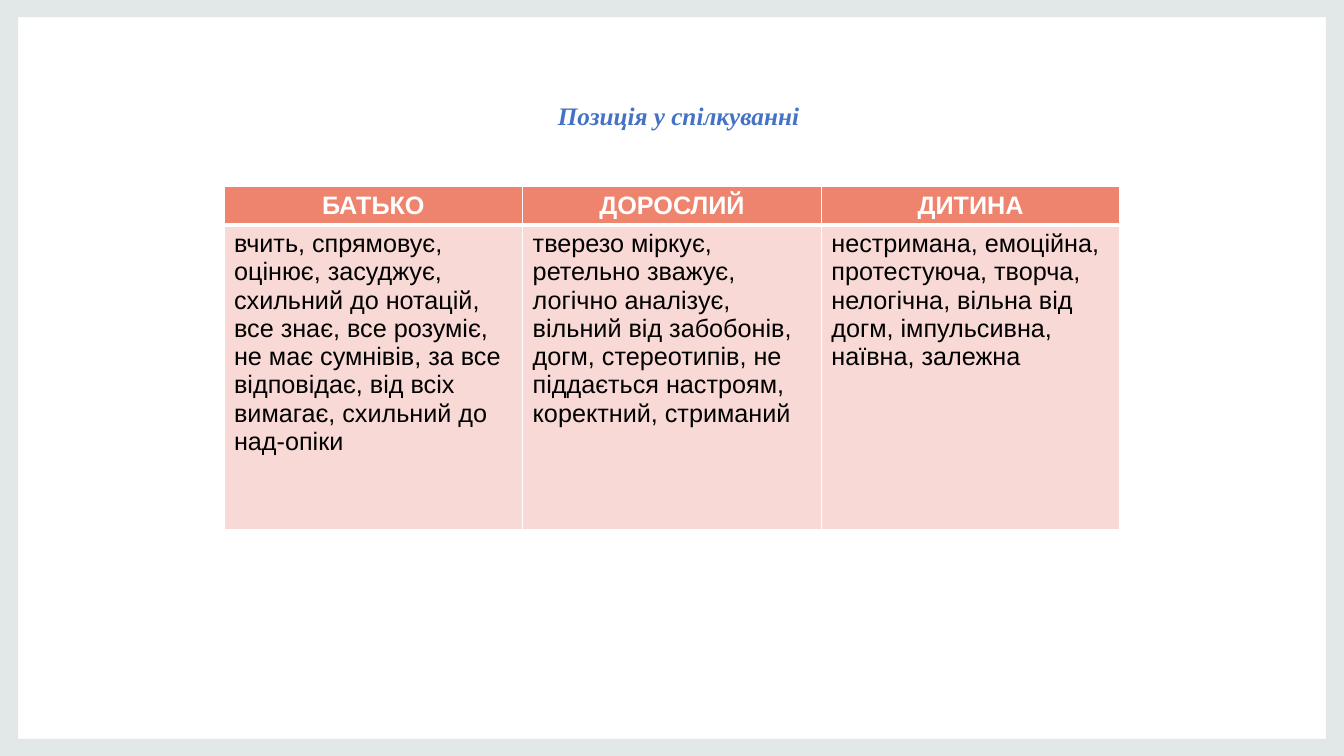
from pptx import Presentation
from pptx.dml.color import RGBColor
from pptx.enum.text import MSO_ANCHOR, PP_ALIGN
from pptx.oxml import parse_xml
from pptx.oxml.ns import nsdecls
from pptx.util import Inches, Pt

THEME = {
    "frame": "E2E7E8", "title": "4472C4", "border": "FFFFFF",
    "head_fill": "EE836E", "head_text": "FFFFFF",
    "body_fill": "F8D9D5", "body_text": "000000",
    "title_font": "Times New Roman", "table_font": "Arial", "size": Pt(18),
}
COLUMNS = [
    ("БАТЬКО", "вчить, спрямовує,\nоцінює, засуджує, схильний до нотацій, все знає, "
               "все розуміє, не має сумнівів, за все відповідає, від всіх вимагає, "
               "схильний до над-опіки"),
    ("ДОРОСЛИЙ", "тверезо міркує, ретельно зважує, логічно аналізує, вільний від "
                 "забобонів, догм, стереотипів, не піддається настроям, коректний, "
                 "стриманий"),
    ("ДИТИНА", "нестримана, емоційна, протестуюча, творча, нелогічна, вільна від "
               "догм, імпульсивна, наївна, залежна"),
]


def format_text(tf, font, color, bold, italic=False, align=PP_ALIGN.LEFT):
    for p in tf.paragraphs:
        p.alignment = align
        for r in p.runs:
            r.font.name, r.font.size = font, THEME["size"]
            r.font.bold, r.font.italic = bold, italic
            r.font.color.rgb = RGBColor.from_string(color)


def set_borders(cell, **widths):
    tc_pr = cell._tc.get_or_add_tcPr()
    for i, (side, width) in enumerate(widths.items()):
        tc_pr.insert(i, parse_xml(
            f'<a:ln{side} {nsdecls("a")} w="{Pt(width)}"><a:solidFill>'
            f'<a:srgbClr val="{THEME["border"]}"/></a:solidFill></a:ln{side}>'))


prs = Presentation()
prs.slide_width, prs.slide_height = Inches(13.33), Inches(7.5)
W, H = prs.slide_width, prs.slide_height
s = prs.slides.add_slide(prs.slide_layouts[5])

# Frame around the slide: outer outline clockwise, inner one the other way
mx, my = Inches(0.18), Inches(0.17)
fb = s.shapes.build_freeform(0, 0)
fb.add_line_segments([(W, 0), (W, H), (0, H)])
fb.move_to(mx, my)
fb.add_line_segments([(mx, H - my), (W - mx, H - my), (W - mx, my)])
frame = fb.convert_to_shape()
frame.shadow.inherit = False
frame.fill.solid()
frame.fill.fore_color.rgb = RGBColor.from_string(THEME["frame"])
frame.line.fill.background()

# Title
title = s.shapes.title
title.left, title.top = Inches(0.84), Inches(0.46)
title.width, title.height = Inches(11.78), Inches(1.38)
tf = title.text_frame
tf.text = "Позиція у спілкуванні"
tf.vertical_anchor = MSO_ANCHOR.MIDDLE
format_text(tf, THEME["title_font"], THEME["title"], True, True, PP_ALIGN.CENTER)

# Table: one column per position, a sixth of the slide free on each side
table = s.shapes.add_table(2, len(COLUMNS), W // 6, Inches(1.85),
                           W * 2 // 3, Inches(3.4)).table
table.rows[0].height, table.rows[1].height = Inches(0.38), Inches(3.02)
for col, texts in enumerate(COLUMNS):
    for row, (part, text) in enumerate(zip(("head", "body"), texts)):
        is_head = part == "head"
        cell = table.cell(row, col)
        cell.text_frame.text = text
        format_text(cell.text_frame, THEME["table_font"], THEME[part + "_text"],
                    is_head, align=PP_ALIGN.CENTER if is_head else PP_ALIGN.LEFT)
        cell.fill.solid()
        cell.fill.fore_color.rgb = RGBColor.from_string(THEME[part + "_fill"])
        set_borders(cell, L=1, R=1, T=1 if is_head else 3, B=3 if is_head else 1)

prs.save("out.pptx")
